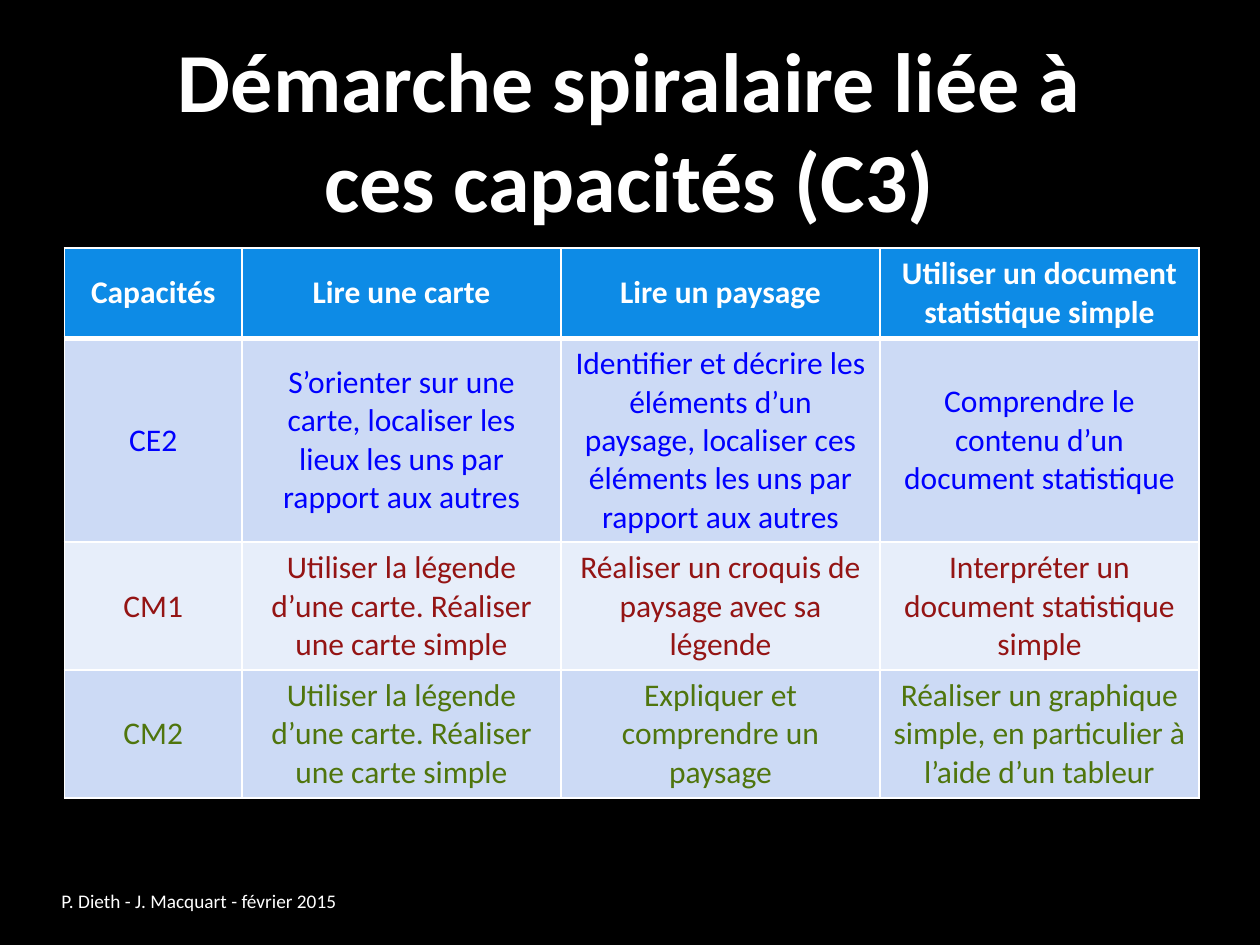
from lxml.etree import SubElement
from pptx import Presentation
from pptx.dml.color import RGBColor
from pptx.enum.text import MSO_ANCHOR, PP_ALIGN
from pptx.oxml.ns import qn
from pptx.util import Cm, Pt

BLACK = RGBColor(0x00, 0x00, 0x00)
WHITE = RGBColor(0xFF, 0xFF, 0xFF)
HEADER_BLUE = RGBColor(0x0D, 0x8B, 0xE6)
BAND_DARK = RGBColor(0xCC, 0xDA, 0xF5)
BAND_LIGHT = RGBColor(0xE7, 0xEE, 0xFA)
BLUE = RGBColor(0x00, 0x00, 0xFF)
RED = RGBColor(0x94, 0x14, 0x14)
GREEN = RGBColor(0x4F, 0x75, 0x0D)

COLUMN_WIDTHS = [3.58, 6.43, 6.43, 6.43]
ROW_HEIGHTS = [1.82, 4.11, 2.58, 2.58]
ROW_STYLES = [(HEADER_BLUE, WHITE), (BAND_DARK, BLUE), (BAND_LIGHT, RED), (BAND_DARK, GREEN)]
SKILLS = [
    ["Capacités", "Lire une carte", "Lire un paysage",
     "Utiliser un document statistique simple"],
    ["CE2",
     "S’orienter sur une carte, localiser les lieux les uns par rapport aux autres",
     "Identifier et décrire les éléments d’un paysage, localiser ces éléments "
     "les uns par rapport aux autres",
     "Comprendre le contenu d’un document statistique"],
    ["CM1",
     "Utiliser la légende d’une carte. Réaliser une carte simple",
     "Réaliser un croquis de paysage avec sa légende",
     "Interpréter un document statistique simple"],
    ["CM2",
     "Utiliser la légende d’une carte. Réaliser une carte simple",
     "Expliquer et comprendre un paysage",
     "Réaliser un graphique simple, en particulier à l’aide d’un tableur"],
]


class SlideBuilder:
    def __init__(self, slide, font_name="Calibri"):
        self.slide = slide
        self.font_name = font_name

    def background(self, color):
        fill = self.slide.background.fill
        fill.solid()
        fill.fore_color.rgb = color

    def set_text(self, frame, text, size, color, bold=False, align=PP_ALIGN.LEFT):
        para = frame.paragraphs[0]
        para.text = text
        para.alignment = align
        para.font.name = self.font_name
        para.font.size = Pt(size)
        para.font.bold = bold
        para.font.color.rgb = color

    def text(self, left, top, width, height, text, size, **style):
        box = self.slide.shapes.add_textbox(Cm(left), Cm(top), Cm(width), Cm(height))
        frame = box.text_frame
        frame.word_wrap = True
        frame.vertical_anchor = MSO_ANCHOR.MIDDLE
        self.set_text(frame, text, size, WHITE, **style)

    def borders(self, cell, top, bottom):
        """Draw white cell edges; top and bottom are widths in points."""
        properties = cell._tc.get_or_add_tcPr()
        edges = [("a:lnL", 1), ("a:lnR", 1), ("a:lnT", top), ("a:lnB", bottom)]
        for index, (tag, width) in enumerate(edges):
            line = SubElement(properties, qn(tag), w=str(Pt(width)))
            fill = SubElement(line, qn("a:solidFill"))
            SubElement(fill, qn("a:srgbClr"), val=str(WHITE))
            properties.insert(index, line)

    def table(self, left, top, widths, heights, rows, styles):
        frame = self.slide.shapes.add_table(
            len(rows), len(widths), Cm(left), Cm(top), Cm(sum(widths)), Cm(sum(heights)))
        table = frame.table
        for column, width in zip(table.columns, widths):
            column.width = Cm(width)
        for row, height in zip(table.rows, heights):
            row.height = Cm(height)
        for r, (texts, (fill, color)) in enumerate(zip(rows, styles)):
            for c, text in enumerate(texts):
                cell = table.cell(r, c)
                cell.vertical_anchor = MSO_ANCHOR.MIDDLE
                cell.fill.solid()
                cell.fill.fore_color.rgb = fill
                self.set_text(cell.text_frame, text, 18, color, r == 0, PP_ALIGN.CENTER)
                self.borders(cell, top=3 if r == 1 else 1, bottom=3 if r == 0 else 1)


def main():
    deck = Presentation()
    deck.slide_width, deck.slide_height = Cm(25.4), Cm(19.05)
    page = SlideBuilder(deck.slides.add_slide(deck.slide_layouts[6]))
    page.background(BLACK)
    page.text(2.16, 0.3, 21.06, 4.6, "Démarche spiralaire liée à ces capacités (C3)",
              48, bold=True, align=PP_ALIGN.CENTER)
    page.text(0.99, 17.65, 8.05, 1.02, "P. Dieth - J. Macquart - février 2015", 11)
    page.table(1.3, 5, COLUMN_WIDTHS, ROW_HEIGHTS, SKILLS, ROW_STYLES)
    deck.save("out.pptx")


if __name__ == "__main__":
    main()
